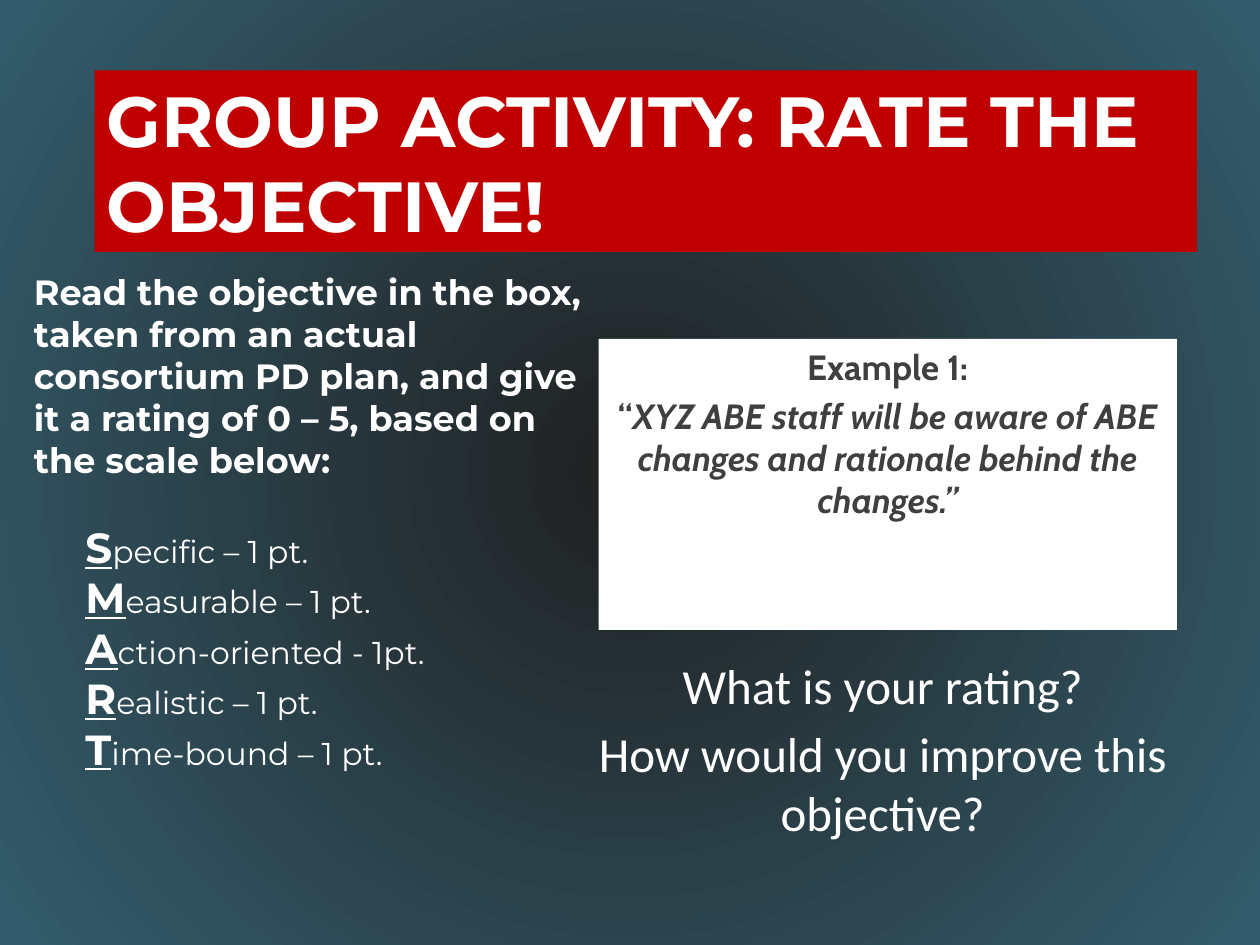
from pptx import Presentation
from pptx.dml.color import RGBColor
from pptx.enum.shapes import MSO_SHAPE
from pptx.enum.text import MSO_ANCHOR, PP_ALIGN
from pptx.oxml import parse_xml
from pptx.oxml.ns import nsdecls, qn
from pptx.util import Inches, Pt

RECTANGLE = MSO_SHAPE.RECTANGLE
TOP, MIDDLE = MSO_ANCHOR.TOP, MSO_ANCHOR.MIDDLE
LEFT, CENTER = PP_ALIGN.LEFT, PP_ALIGN.CENTER

COLORS = {
    "center": "202020",
    "edge": "335D6D",
    "banner": "C00000",
    "white": "FFFFFF",
    "dark": "3F3F3F",
}

TITLE = {"name": "Montserrat", "size": Pt(40.5), "bold": True}
INSTRUCTIONS = {"name": "Montserrat", "size": Pt(20), "bold": True}
INITIAL = {"name": "Montserrat", "size": Pt(24), "bold": True, "underline": True}
CRITERION = {"name": "Montserrat", "size": Pt(18)}
EXAMPLE = {"name": "Cabin", "size": Pt(20), "bold": True}
QUOTE = {**EXAMPLE, "italic": True}
QUESTION = {"name": "Calibri", "size": Pt(28)}

CRITERIA = [
    "Specific – 1 pt.",
    "Measurable – 1 pt.",
    "Action-oriented - 1pt.",
    "Realistic – 1 pt.",
    "Time-bound – 1 pt.",
]


class SlideBuilder:
    """Adds styled elements to the current slide."""

    def __init__(self, slide):
        self.slide = slide

    def background(self, center, edge):
        fill = self.slide.background.fill
        fill.gradient()
        for stop, color in zip(fill.gradient_stops, (center, edge)):
            stop.color.rgb = RGBColor.from_string(COLORS[color])
        linear = self.slide.element.find(".//" + qn("a:lin"))
        circle = parse_xml(
            f'<a:path {nsdecls("a")} path="circle">'
            '<a:fillToRect l="50000" t="50000" r="50000" b="50000"/></a:path>'
        )
        linear.getparent().replace(linear, circle)

    def add_paragraphs(self, shape, paragraphs, color, align, anchor, gap):
        frame = shape.text_frame
        frame.word_wrap = True
        frame.vertical_anchor = anchor
        for index, runs in enumerate(paragraphs):
            paragraph = frame.add_paragraph() if index else frame.paragraphs[0]
            paragraph.alignment = align
            if index and gap:
                paragraph.space_before = Pt(gap)
            for text, style in runs:
                run = paragraph.add_run()
                run.text = text
                run.font.color.rgb = RGBColor.from_string(COLORS[color])
                for attribute, value in style.items():
                    setattr(run.font, attribute, value)

    def text(self, box, paragraphs, color="white", align=LEFT, gap=0):
        shape = self.slide.shapes.add_textbox(*map(Inches, box))
        self.add_paragraphs(shape, paragraphs, color, align, TOP, gap)

    def panel(self, box, fill, paragraphs, color="white", align=LEFT, anchor=TOP, gap=0):
        shape = self.slide.shapes.add_shape(RECTANGLE, *map(Inches, box))
        shape.shadow.inherit = False
        shape.fill.solid()
        shape.fill.fore_color.rgb = RGBColor.from_string(COLORS[fill])
        shape.line.fill.background()
        self.add_paragraphs(shape, paragraphs, color, align, anchor, gap)


def main():
    presentation = Presentation()
    presentation.slide_width = Inches(10)
    presentation.slide_height = Inches(7.5)
    builder = SlideBuilder(presentation.slides.add_slide(presentation.slide_layouts[6]))

    builder.background("center", "edge")
    builder.panel(
        (0.75, 0.56, 8.75, 1.44),
        "banner",
        [[("GROUP ACTIVITY: RATE THE OBJECTIVE!", TITLE)]],
        anchor=MIDDLE,
    )
    instructions = (
        "Read the objective in the box, taken from an actual consortium PD plan, "
        "and give it a rating of 0 – 5, based on the scale below:"
    )
    builder.text((0.17, 2.1, 4.58, 4.73), [[(instructions, INSTRUCTIONS)]])
    quote = "XYZ ABE staff will be aware of ABE changes and rationale behind the changes.”"
    builder.panel(
        (4.75, 2.69, 4.59, 2.31),
        "white",
        [[("Example 1:", EXAMPLE)], [("“", EXAMPLE), (quote, QUOTE)]],
        color="dark",
        align=CENTER,
        gap=4,
    )
    builder.text(
        (0.58, 4.09, 3.25, 2.12),
        [[(line[0], INITIAL), (line[1:], CRITERION)] for line in CRITERIA],
    )
    questions = ["What is your rating?", "How would you improve this objective?"]
    builder.text(
        (4.17, 5.15, 5.67, 1.61),
        [[(question, QUESTION)] for question in questions],
        align=CENTER,
        gap=5.6,
    )
    presentation.save("out.pptx")


if __name__ == "__main__":
    main()
